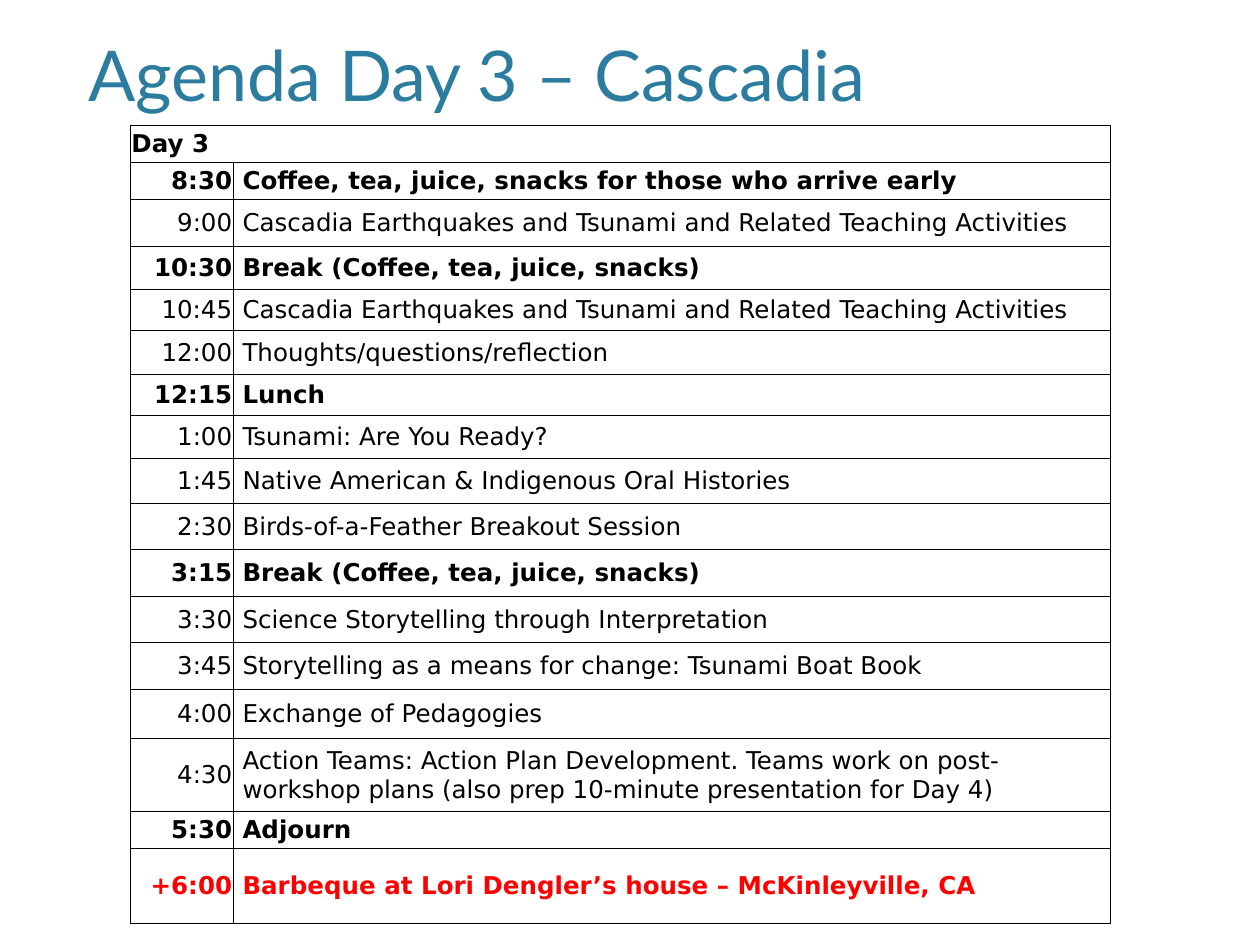
from lxml import etree
from pptx import Presentation
from pptx.dml.color import RGBColor
from pptx.enum import text as t
from pptx.oxml import ns
from pptx.util import Pt

BLACK = RGBColor(0, 0, 0)
RED = RGBColor(255, 0, 0)
TEAL = RGBColor(0x2C, 0x7C, 0x9F)

TITLE = "Agenda Day 3 – Cascadia"
HEAD = "Day 3"
TALK = "Cascadia Earthquakes and Tsunami and Related Teaching Activities"
BREAK = "Break (Coffee, tea, juice, snacks)"
# time, session, row height, bold, colour
AGENDA = [
    ("8:30", "Coffee, tea, juice, snacks for those who arrive early", 21.2, True, BLACK),
    ("9:00", TALK, 26.8, False, BLACK),
    ("10:30", BREAK, 24.6, True, BLACK),
    ("10:45", TALK, 23.4, False, BLACK),
    ("12:00", "Thoughts/questions/reflection", 25.2, False, BLACK),
    ("12:15", "Lunch", 23.4, True, BLACK),
    ("1:00", "Tsunami: Are You Ready?", 24.6, False, BLACK),
    ("1:45", "Native American & Indigenous Oral Histories", 25.6, False, BLACK),
    ("2:30", "Birds-of-a-Feather Breakout Session", 26.4, False, BLACK),
    ("3:15", BREAK, 26.8, True, BLACK),
    ("3:30", "Science Storytelling through Interpretation", 26.4, False, BLACK),
    ("3:45", "Storytelling as a means for change: Tsunami Boat Book", 26.8, False, BLACK),
    ("4:00", "Exchange of Pedagogies", 28, False, BLACK),
    ("4:30", "Action Teams: Action Plan Development. Teams work on "
             "post-workshop plans (also prep 10-minute presentation for Day 4)",
     41.7, False, BLACK),
    ("5:30", "Adjourn", 21.2, True, BLACK),
    ("+6:00", "Barbeque at Lori Dengler’s house – McKinleyville, CA", 42.8, True, RED),
]
HEAD_H = 21.2
WIDTHS = (59, 501)


def write(frame, words, font="DejaVu Sans", size=14, color=BLACK, bold=False,
          align=t.PP_ALIGN.LEFT, indent=0):
    para = frame.paragraphs[0]
    para.alignment = align
    props = para._p.get_or_add_pPr()
    props.set("marL", str(Pt(indent)))
    props.set("indent", "0")
    run = para.add_run()
    run.text = words
    run.font.name = font
    run.font.size = Pt(size)
    run.font.bold = bold
    run.font.color.rgb = color


def frame_cell(cell):
    """Give a cell thin black borders, no fill and narrow margins."""
    props = cell._tc.get_or_add_tcPr()
    for side in "LRTB":
        line = etree.SubElement(props, ns.qn(f"a:ln{side}"), w=str(Pt(0.5)))
        fill = etree.SubElement(line, ns.qn("a:solidFill"))
        etree.SubElement(fill, ns.qn("a:srgbClr"), val=str(BLACK))
    cell.fill.background()
    cell.margin_left = cell.margin_right = cell.margin_top = Pt(0.7)
    cell.margin_bottom = 0
    cell.vertical_anchor = t.MSO_ANCHOR.MIDDLE


def main():
    deck = Presentation()
    deck.slide_width, deck.slide_height = Pt(720), Pt(540)
    slide = deck.slides.add_slide(deck.slide_layouts[5])

    title = slide.shapes.title
    title.left, title.top, title.width, title.height = Pt(43.2), Pt(8.6), Pt(633.6), Pt(61.2)
    title.text_frame.vertical_anchor = t.MSO_ANCHOR.BOTTOM
    title.text_frame.auto_size = t.MSO_AUTO_SIZE.NONE
    write(title.text_frame, TITLE, font="Lato", size=40, color=TEAL)

    heights = [HEAD_H] + [row[2] for row in AGENDA]
    table = slide.shapes.add_table(len(heights), len(WIDTHS), Pt(74.4), Pt(71.6),
                                   Pt(sum(WIDTHS)), Pt(sum(heights))).table
    table.first_row = table.horz_banding = False
    for col, width in zip(table.columns, WIDTHS):
        col.width = Pt(width)
    for row, height in zip(table.rows, heights):
        row.height = Pt(height)
        for cell in row.cells:
            frame_cell(cell)

    table.cell(0, 0).merge(table.cell(0, 1))
    write(table.cell(0, 0).text_frame, HEAD, bold=True)
    for i, (time, session, _, bold, color) in enumerate(AGENDA, 1):
        write(table.cell(i, 0).text_frame, time, bold=bold, color=color,
              align=t.PP_ALIGN.RIGHT)
        write(table.cell(i, 1).text_frame, session, bold=bold, color=color, indent=4.5)

    deck.save("out.pptx")


if __name__ == "__main__":
    main()
